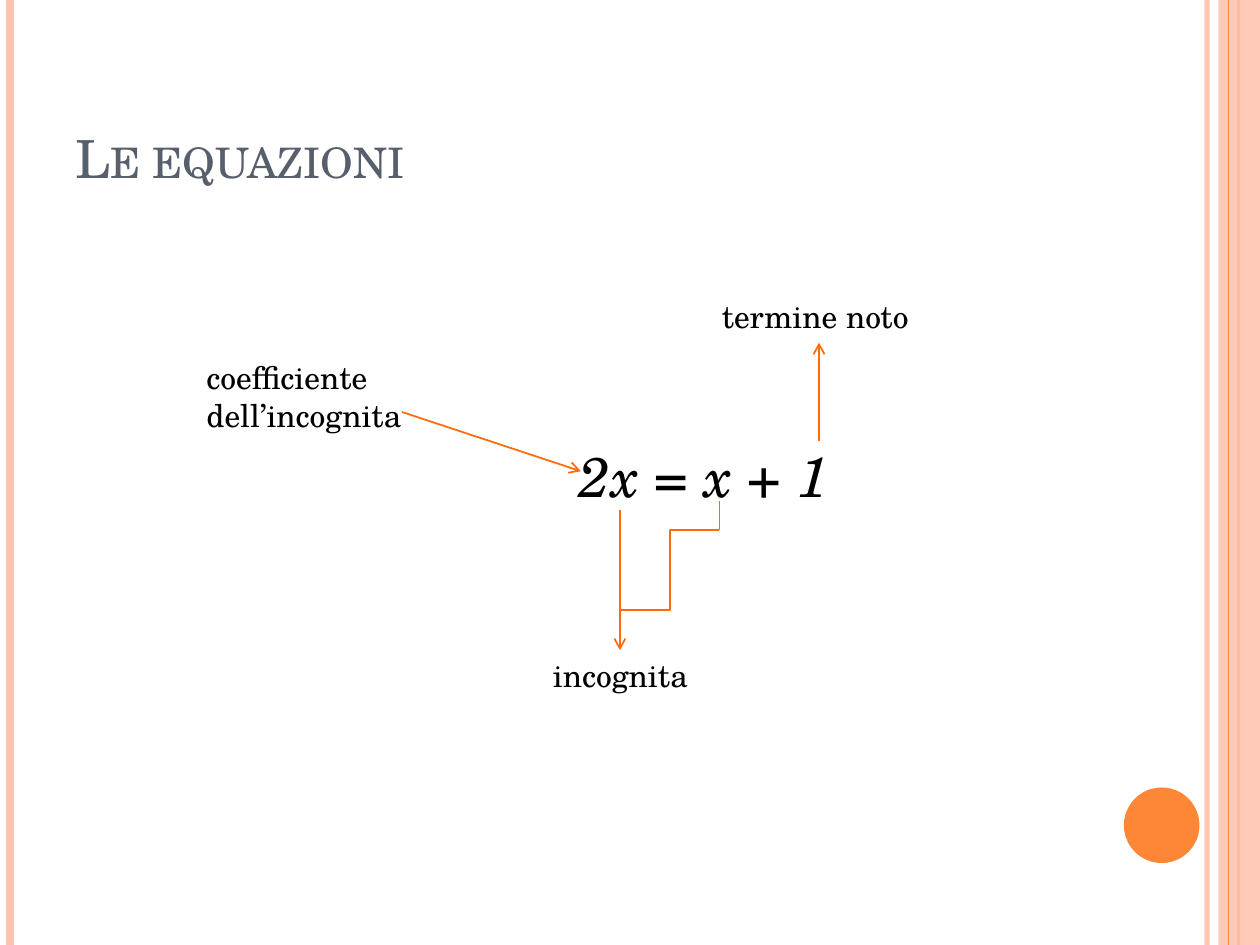
"""Builds a slide that names the parts of a linear equation."""
import dataclasses
import typing

import pptx
import pptx.dml.color
import pptx.enum.shapes
import pptx.enum.text
import pptx.oxml.ns
import pptx.oxml.xmlchemy
import pptx.util
import lxml.etree

COLUMNS, ROWS = 100, 75
CELL = pptx.util.Inches(0.1)
FONT = "TeX Gyre Schola"
PINK, ORANGE, ARROW_ORANGE = "FEC3AE", "FE8637", "FF6B0A"
SLATE, BLACK = "575F6D", "000000"
SHAPE = pptx.enum.shapes.MSO_SHAPE
CONNECTOR = pptx.enum.shapes.MSO_CONNECTOR
ANCHOR = pptx.enum.text.MSO_ANCHOR
ALIGN = pptx.enum.text.PP_ALIGN


@dataclasses.dataclass(frozen=True)
class Line:
    """A connector between two grid points."""
    start: tuple[float, float]
    end: tuple[float, float]
    color: str = ARROW_ORANGE
    width: float = 1
    arrow: bool = False
    elbow: bool = False
    opacity: int = 100


@dataclasses.dataclass(frozen=True)
class Block:
    """A filled shape on the grid."""
    kind: typing.Any
    area: tuple[float, float, float, float]
    color: str
    opacity: int = 100


@dataclasses.dataclass(frozen=True)
class Label:
    """A caption on the grid."""
    text: str
    area: tuple[float, float, float, float]


def rail(column: float, color: str, width: float, opacity: int = 100) -> Line:
    """Return a vertical line as tall as the slide."""
    return Line((column, 0), (column, ROWS), color, width, opacity=opacity)


DECORATION = [
    rail(95.8, PINK, 3, 93),
    rail(0.8, PINK, 4.5),
    rail(98.3, ORANGE, 1.5),
    Block(SHAPE.RECTANGLE, (96.7, 0, COLUMNS - 96.7, ROWS), PINK, 87),
    rail(97.5, ORANGE, 0.75),
    Block(SHAPE.OVAL, (89.2, 62.5, 6, 6), ORANGE),
]
POINTERS = [
    Line((49.2, 40.5), (49.2, 51.6), arrow=True),
    Line((65, 35), (65, 27.2), arrow=True),
    Line((49.2, 48.4), (57.1, 42.1), elbow=True),
    Line((57.1, 39.8), (57.1, 42.1)),
    Line((31.9, 32.7), (46.1, 37.4), arrow=True),
]
LABELS = [
    Label("termine noto", (56.3, 23.1, 18.1, 4)),
    Label("incognita", (42.9, 51.6, 13.4, 4)),
    Label("coefficiente dell’incognita", (15.4, 27.9, 18.9, 7.1)),
]


def grid(*cells: float) -> list[int]:
    """Convert grid units to slide lengths."""
    return [round(cell * CELL) for cell in cells]


def add_child(parent: typing.Any, tag: str, **attributes: str) -> None:
    """Append a drawing element to an XML parent."""
    lxml.etree.SubElement(parent, pptx.oxml.ns.qn(tag), attributes)


def paint(fill: typing.Any, color: str, opacity: int = 100) -> None:
    """Give a fill a solid colour, translucent if asked."""
    fill.solid()
    fill.fore_color.rgb = pptx.dml.color.RGBColor.from_string(color)
    if opacity < 100:
        tint = fill._xPr.find(".//" + pptx.oxml.ns.qn("a:srgbClr"))
        add_child(tint, "a:alpha", val=str(opacity * 1000))


def draw_line(slide: typing.Any, line: Line) -> None:
    """Draw a connector without a shadow."""
    kind = CONNECTOR.ELBOW if line.elbow else CONNECTOR.STRAIGHT
    connector = slide.shapes.add_connector(kind, *grid(*line.start, *line.end))
    connector.line.width = pptx.util.Pt(line.width)
    paint(connector.line.fill, line.color, line.opacity)
    if line.arrow:
        add_child(connector.line._get_or_add_ln(), "a:tailEnd", type="arrow")
    add_child(connector._element.spPr, "a:effectLst")


def draw_block(slide: typing.Any, block: Block) -> None:
    """Draw a filled shape without outline or shadow."""
    shape = slide.shapes.add_shape(block.kind, *grid(*block.area))
    shape.shadow.inherit = False
    paint(shape.fill, block.color, block.opacity)
    shape.line.fill.background()


def write(box: typing.Any, text: str, size: float, color: str,
          align: typing.Any = ALIGN.LEFT, anchor: typing.Any = ANCHOR.TOP) -> typing.Any:
    """Write one formatted run in a box and return it."""
    frame = box.text_frame
    frame.word_wrap = True
    frame.auto_size = pptx.enum.text.MSO_AUTO_SIZE.NONE
    frame.vertical_anchor = anchor
    para = frame.paragraphs[0]
    para.alignment = align
    span = para.add_run()
    span.text = text
    span.font.name = FONT
    span.font.size = pptx.util.Pt(size)
    paint(span.font.fill, color)
    return span


def place(box: typing.Any, *area: float) -> None:
    """Move a placeholder to a grid area."""
    box.left, box.top, box.width, box.height = grid(*area)


def draw_label(slide: typing.Any, label: Label) -> None:
    """Draw a caption."""
    box = slide.shapes.add_textbox(*grid(*label.area))
    box.text_frame.margin_right = 0
    write(box, label.text, 18, BLACK)


def fill_title(title: typing.Any) -> None:
    """Place and write the heading in small capitals."""
    place(title, 5, 3, 81.7, 12.5)
    span = write(title, "Le equazioni", 30, SLATE, anchor=ANCHOR.BOTTOM)
    span.font._element.set("cap", "small")


def fill_equation(body: typing.Any) -> None:
    """Place and write the equation without a bullet."""
    place(body, 31.1, 19.8, 49.6, 24.7)
    body.text_frame.margin_top = grid(11.6)[0]
    span = write(body, "2x = x + 1", 32, BLACK, ALIGN.CENTER, ANCHOR.MIDDLE)
    span.font.italic = True
    para = body.text_frame.paragraphs[0]
    para.space_before = pptx.util.Pt(0)
    properties = para._p.get_or_add_pPr()
    properties.set("marL", "0")
    properties.set("indent", "0")
    add_child(properties, "a:buNone")


def main() -> None:
    """Build and save the deck."""
    deck = pptx.Presentation()
    deck.slide_width, deck.slide_height = grid(COLUMNS, ROWS)
    slide = deck.slides.add_slide(deck.slide_layouts[1])
    for item in DECORATION:
        draw = draw_line if isinstance(item, Line) else draw_block
        draw(slide, item)
    fill_title(slide.shapes.title)
    fill_equation(slide.placeholders[1])
    for line in POINTERS:
        draw_line(slide, line)
    for label in LABELS:
        draw_label(slide, label)
    deck.save("out.pptx")


if __name__ == "__main__":
    main()
